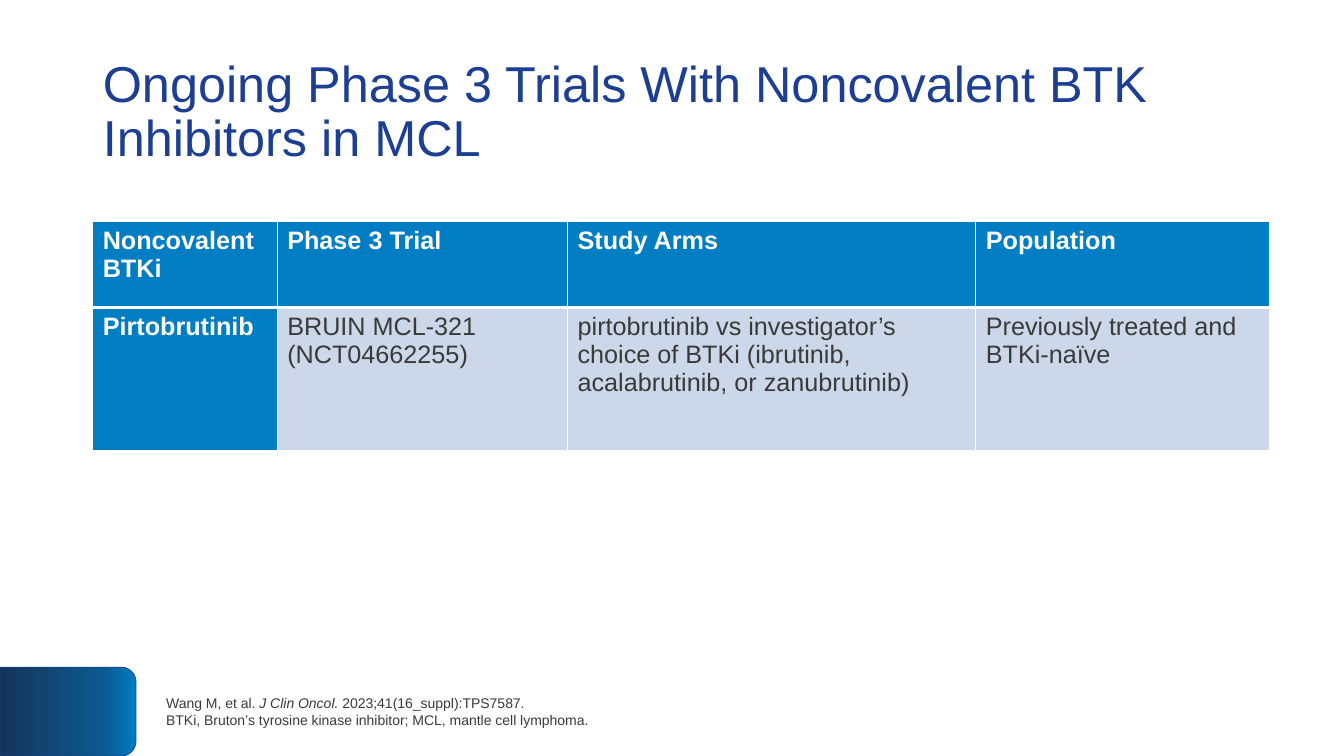
"""Builds a slide listing ongoing phase 3 trials of noncovalent BTK inhibitors in MCL."""
from copy import deepcopy

from pptx import Presentation
from pptx.dml.color import RGBColor
from pptx.enum.shapes import MSO_SHAPE as Shape
from pptx.enum.text import MSO_ANCHOR as Anchor, PP_ALIGN as Align
from pptx.oxml.ns import qn
from pptx.util import Pt
from lxml.etree import SubElement

FONT = "Arial"
COLORS = {"title": "1C3F93", "header": "007DC3", "body": "CCD7E9",
          "text": "3A3A3A", "white": "FFFFFF"}
TITLE = "Ongoing Phase 3 Trials With Noncovalent BTK Inhibitors in MCL"
TRIALS = [
    ("Noncovalent BTKi", "Phase 3 Trial", "Study Arms", "Population"),
    ("Pirtobrutinib", "BRUIN MCL-321 (NCT04662255)",
     "pirtobrutinib vs investigator’s choice of BTKi (ibrutinib, acalabrutinib, or zanubrutinib)",
     "Previously treated and BTKi-naïve"),
]
CITATION = ("Wang M, et al. ", "J Clin Oncol. ", "2023;41(16_suppl):TPS7587.")
ABBREVIATIONS = "BTKi, Bruton’s tyrosine kinase inhibitor; MCL, mantle cell lymphoma."
TAB_GRADIENT = [(0, "007DC3"), (0.25, "0B598F"), (1, "15345A")]

SLIDE_W, SLIDE_H = 960, 540
LEFT = 66.24
COLUMN_WIDTHS = (131.8, 207.4, 291.6, 210.2)
ROW_HEIGHTS = (61.2, 102.2)
TAB_W, TAB_H = 97.2, 63.4


def rgb(name):
    return RGBColor.from_string(COLORS[name])


def style(paragraph, size, color, bold=False):
    font = paragraph.font
    font.name, font.size, font.bold = FONT, Pt(size), bold
    font.color.rgb = rgb(color)


def add_corner_tab(slide):
    left = (TAB_W - TAB_H) / 2
    top = SLIDE_H - (TAB_H + TAB_W) / 2
    tab = slide.shapes.add_shape(Shape.ROUND_2_SAME_RECTANGLE,
                                 Pt(left), Pt(top), Pt(TAB_H), Pt(TAB_W))
    tab.rotation = 90
    tab.shadow.inherit = False
    tab.fill.gradient()
    tab.fill.gradient_angle = 270
    stops = tab._element.spPr.find(qn("a:gradFill")).find(qn("a:gsLst"))
    stops.append(deepcopy(stops[-1]))
    for stop, (position, color) in zip(tab.fill.gradient_stops, TAB_GRADIENT):
        stop.position = position
        stop.color.rgb = RGBColor.from_string(color)
    tab.line.color.rgb = rgb("title")
    tab.line.width = Pt(0.5)


def add_title(slide):
    title = slide.shapes.title
    title.left, title.top, title.width, title.height = Pt(LEFT), Pt(28.8), Pt(828), Pt(104.4)
    title.text_frame.text = TITLE
    title.text_frame.vertical_anchor = Anchor.MIDDLE
    heading = title.text_frame.paragraphs[0]
    heading.alignment = Align.LEFT
    heading.line_spacing = 0.9
    style(heading, 36, "title")


def add_borders(cell, is_header):
    widths = {"L": 1, "R": 1, "T": 1 if is_header else 3, "B": 3 if is_header else 1}
    properties = cell._tc.get_or_add_tcPr()
    for side, width in widths.items():
        border = SubElement(properties, qn(f"a:ln{side}"), w=str(Pt(width)))
        SubElement(SubElement(border, qn("a:solidFill")), qn("a:srgbClr"), val=COLORS["white"])


def add_trials(slide):
    trials = slide.shapes.add_table(len(TRIALS), len(COLUMN_WIDTHS), Pt(LEFT), Pt(158.4),
                                    Pt(sum(COLUMN_WIDTHS)), Pt(sum(ROW_HEIGHTS))).table
    trials.first_col = True
    for column, width in zip(trials.columns, COLUMN_WIDTHS):
        column.width = Pt(width)
    for r, (height, entries) in enumerate(zip(ROW_HEIGHTS, TRIALS)):
        trials.rows[r].height = Pt(height)
        for c, entry in enumerate(entries):
            cell = trials.cell(r, c)
            is_heading = r == 0 or c == 0
            add_borders(cell, r == 0)
            cell.fill.solid()
            cell.fill.fore_color.rgb = rgb("header" if is_heading else "body")
            cell.text = entry
            style(cell.text_frame.paragraphs[0], 18,
                  "white" if is_heading else "text", is_heading)


def add_references(slide):
    references = slide.shapes.add_textbox(Pt(111.6), Pt(SLIDE_H - TAB_H), Pt(838.8), Pt(TAB_H))
    frame = references.text_frame
    frame.word_wrap = True
    frame.vertical_anchor = Anchor.MIDDLE
    note = frame.paragraphs[0]
    style(note, 10, "text")
    authors, journal, issue = (note.add_run() for _ in CITATION)
    authors.text, journal.text, issue.text = CITATION
    journal.font.italic = True
    note.add_line_break()
    note.add_run().text = ABBREVIATIONS


def main():
    deck = Presentation()
    deck.slide_width, deck.slide_height = Pt(SLIDE_W), Pt(SLIDE_H)
    slide = deck.slides.add_slide(deck.slide_layouts[5])
    add_corner_tab(slide)
    add_title(slide)
    add_trials(slide)
    add_references(slide)
    deck.save("out.pptx")


if __name__ == "__main__":
    main()
